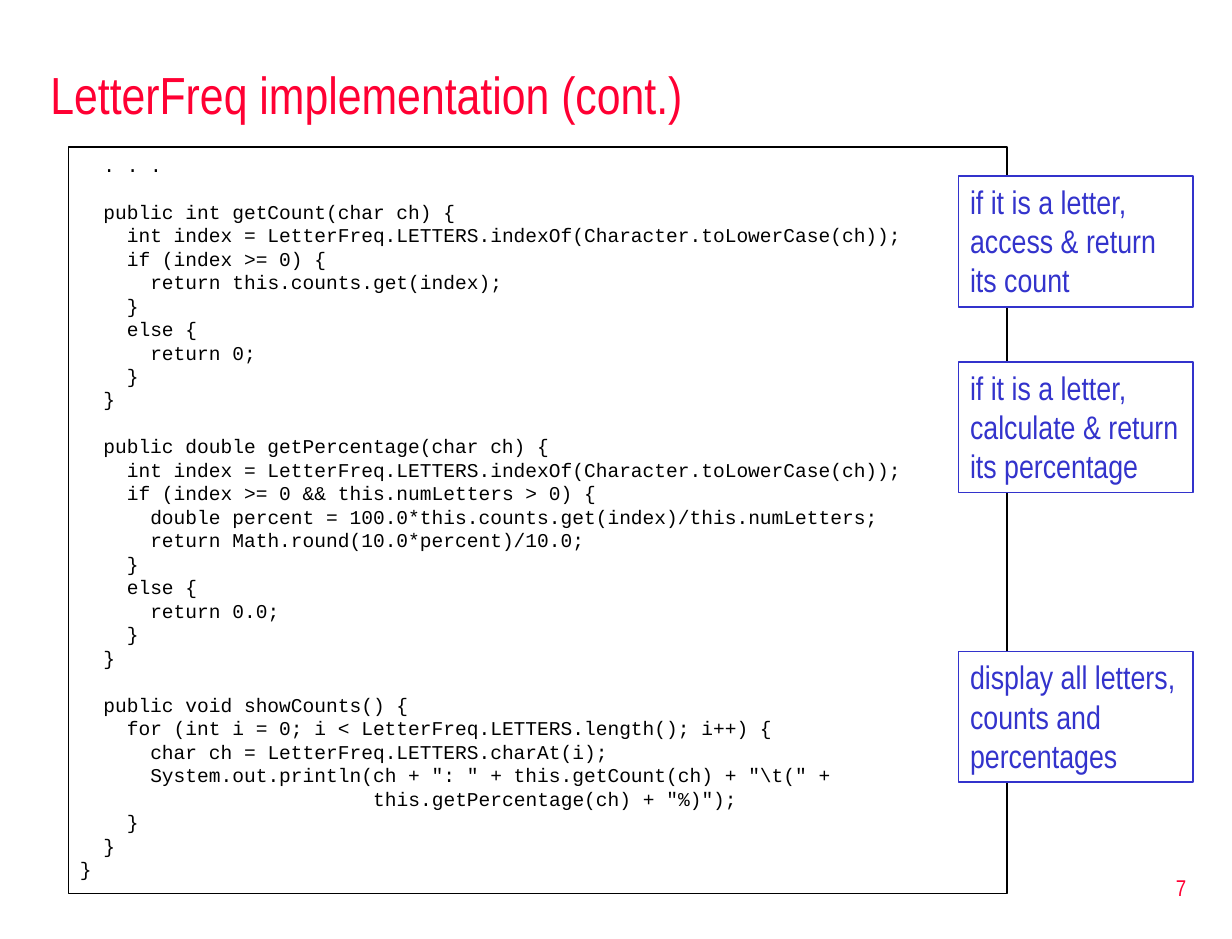
import pptx
import pptx.dml.color
import pptx.enum.shapes
import pptx.enum.text
import pptx.util
from dataclasses import dataclass

Cm, Pt = pptx.util.Cm, pptx.util.Pt
RGB = pptx.dml.color.RGBColor.from_string
ANCHOR = pptx.enum.text.MSO_ANCHOR
ALIGN = pptx.enum.text.PP_ALIGN

TITLE = "LetterFreq implementation (cont.)"
SLIDE_NUMBER = "7"
FIND_INDEX = "int index = LetterFreq.LETTERS.indexOf(Character.toLowerCase(ch));"
CODE_BLOCKS = [  # one list a block; each line is its indent in characters, text
    [
        (2, ". . ."),
    ],
    [
        (2, "public int getCount(char ch) {"),
        (4, FIND_INDEX),
        (4, "if (index >= 0) {"),
        (6, "return this.counts.get(index);"),
        (4, "}"),
        (4, "else {"),
        (6, "return 0;"),
        (4, "}"),
        (2, "}"),
    ],
    [
        (2, "public double getPercentage(char ch) {"),
        (4, FIND_INDEX),
        (4, "if (index >= 0 && this.numLetters > 0) {"),
        (6, "double percent = 100.0*this.counts.get(index)/this.numLetters;"),
        (6, "return Math.round(10.0*percent)/10.0;"),
        (4, "}"),
        (4, "else {"),
        (6, "return 0.0;"),
        (4, "}"),
        (2, "}"),
    ],
    [
        (2, "public void showCounts() {"),
        (4, "for (int i = 0; i < LetterFreq.LETTERS.length(); i++) {"),
        (6, "char ch = LetterFreq.LETTERS.charAt(i);"),
        (6, r'System.out.println(ch + ": " + this.getCount(ch) + "\t(" +'),
        (25, 'this.getPercentage(ch) + "%)");'),
        (4, "}"),
        (2, "}"),
        (0, "}"),
    ],
]
NOTES = [  # top in cm, text
    (3.81, "if it is a letter, access & return its count"),
    (7.83, "if it is a letter, calculate & return its percentage"),
    (14.1, "display all letters, counts and percentages"),
]


@dataclass(frozen=True)
class Theme:
    heading: str = "FF0033"
    code: str = "000000"
    note: str = "3333CC"
    paper: str = "FFFFFF"
    text_font: str = "Arial Narrow"
    code_font: str = "Courier New"
    title_size: float = 32
    note_size: float = 20
    number_size: float = 14
    code_size: float = 12
    code_leading: float = 14.4
    code_char_width: float = 7.2


THEME = Theme()


def style(paragraph, font_name, size, color):
    paragraph.font.name = font_name
    paragraph.font.size = Pt(size)
    paragraph.font.color.rgb = RGB(color)


def add_label(slide, area, text, size, align):
    frame = slide.shapes.add_textbox(*map(Cm, area)).text_frame
    frame.word_wrap = True
    frame.vertical_anchor = ANCHOR.MIDDLE
    paragraph = frame.paragraphs[0]
    paragraph.text = text
    paragraph.alignment = align
    style(paragraph, THEME.text_font, size, THEME.heading)


def add_box(slide, area, line_color, fill_color=None):
    """Add an outlined rectangle and return its top-anchored text frame."""
    box = slide.shapes.add_shape(
        pptx.enum.shapes.MSO_SHAPE.RECTANGLE, *map(Cm, area))
    box.shadow.inherit = False
    box.line.color.rgb = RGB(line_color)
    box.line.width = Pt(1)
    if fill_color:
        box.fill.solid()
        box.fill.fore_color.rgb = RGB(fill_color)
    else:
        box.fill.background()
    frame = box.text_frame
    frame.word_wrap = True
    frame.vertical_anchor = ANCHOR.TOP
    return frame


def add_code(frame, blocks):
    """Write one paragraph a line, with the height of one line between blocks."""
    paragraph = frame.paragraphs[0]
    for block_index, block in enumerate(blocks):
        for line_index, (indent, text) in enumerate(block):
            if block_index or line_index:
                paragraph = frame.add_paragraph()
            paragraph.text = text
            paragraph.alignment = ALIGN.LEFT
            paragraph.line_spacing = Pt(THEME.code_leading)
            if block_index and not line_index:
                paragraph.space_before = Pt(THEME.code_leading)
            properties = paragraph._p.get_or_add_pPr()
            properties.set("marL", str(int(Pt(indent * THEME.code_char_width))))
            properties.set("indent", "0")
            style(paragraph, THEME.code_font, THEME.code_size, THEME.code)


def main():
    deck = pptx.Presentation()
    deck.slide_width, deck.slide_height = Cm(26.67), Cm(20.32)
    slide = deck.slides.add_slide(deck.slide_layouts[6])

    add_label(slide, (20.37, 18.52, 5.56, 1.35), SLIDE_NUMBER,
              THEME.number_size, ALIGN.RIGHT)
    add_label(slide, (0.84, 1.07, 25.2, 1.9), TITLE,
              THEME.title_size, ALIGN.LEFT)
    add_code(add_box(slide, (1.48, 3.18, 20.32, 16.16), THEME.code), CODE_BLOCKS)
    for top, text in NOTES:
        frame = add_box(slide, (20.75, top, 5.08, 2.83), THEME.note, THEME.paper)
        note = frame.paragraphs[0]
        note.text = text
        note.alignment = ALIGN.LEFT
        style(note, THEME.text_font, THEME.note_size, THEME.note)

    deck.save("out.pptx")


if __name__ == "__main__":
    main()
